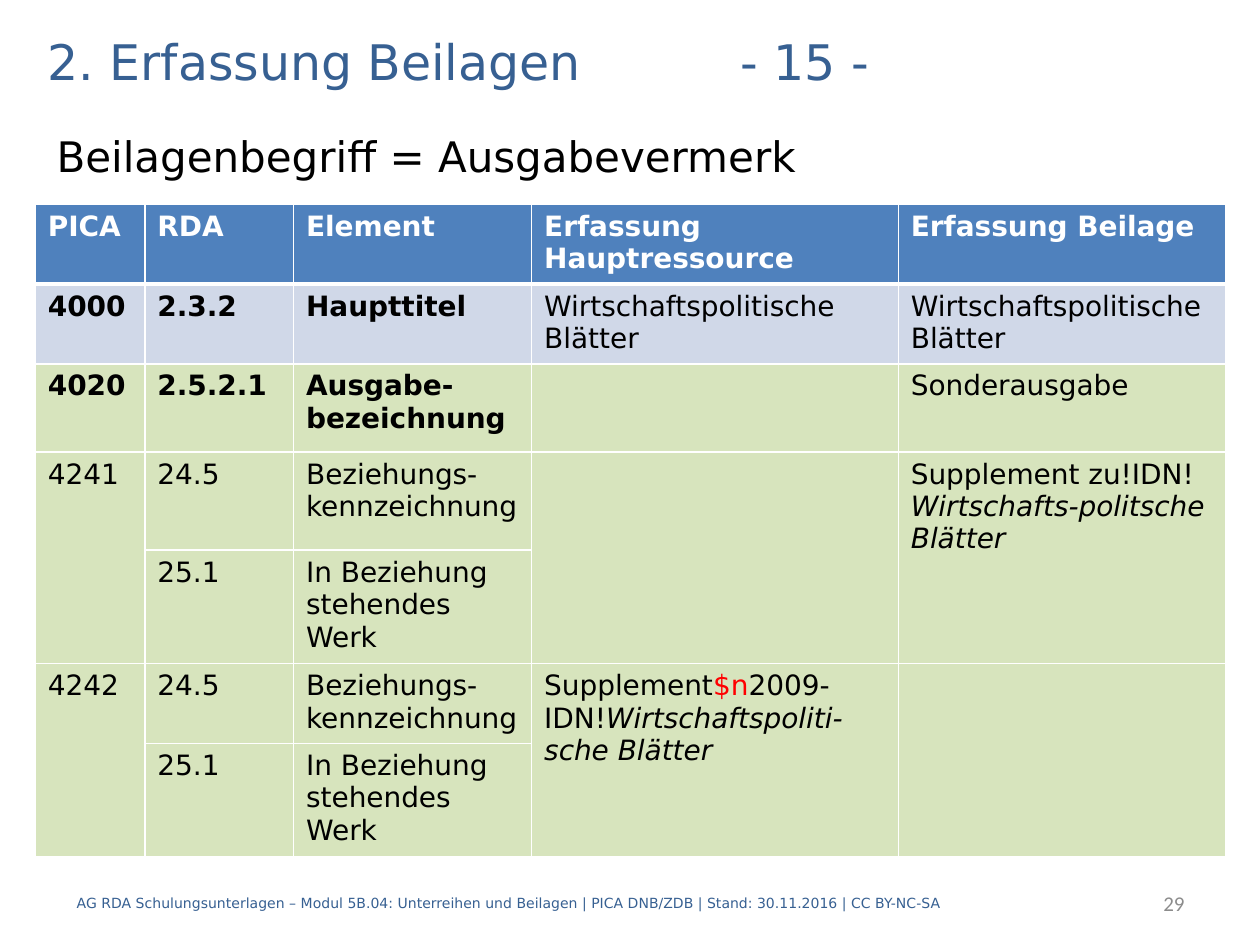
from dataclasses import dataclass

from lxml.etree import SubElement
from pptx import Presentation
from pptx.dml.color import RGBColor
from pptx.enum.text import MSO_ANCHOR, PP_ALIGN
from pptx.oxml.ns import qn
from pptx.util import Inches, Pt


@dataclass(frozen=True)
class Theme:
    font: str = "DejaVu Sans"
    number_font: str = "Calibri"
    blue: str = "376092"
    black: str = "000000"
    white: str = "FFFFFF"
    gray: str = "8C8C8C"
    red: str = "FF0000"
    header_fill: str = "4F81BD"
    title_fill: str = "D0D8E8"
    green_fill: str = "D7E4BD"
    title_size: int = 28
    subtitle_size: int = 24
    table_size: int = 16
    number_size: int = 12
    footer_size: int = 8


THEME = Theme()

COLUMN_WIDTHS = (0.87, 1.18, 1.89, 2.91, 2.6)
ROW_HEIGHTS = (0.63, 0.63, 0.7, 0.78, 0.25, 0.63, 0.63)
BOLD_CELLS = {(row, column) for row in (1, 2) for column in range(3)}
MERGED_ROWS = (3, 5)
MERGED_COLUMNS = (0, 3, 4)

DESIGNATION = "Beziehungs-kennzeichnung"
RELATED_WORK = "In Beziehung stehendes Werk"
MAIN_TITLE = "Wirtschaftspolitische Blätter"
ITALIC = {"italic": True}

# A cell is a plain string or a list of (text, format values) spans
ROWS = (
    ("PICA", "RDA", "Element", "Erfassung Hauptressource", "Erfassung Beilage"),
    ("4000", "2.3.2", "Haupttitel", MAIN_TITLE, MAIN_TITLE),
    ("4020", "2.5.2.1", "Ausgabe-bezeichnung", "", "Sonderausgabe"),
    ("4241", "24.5", DESIGNATION, "",
     [("Supplement zu!IDN!", {}), ("Wirtschafts-politsche Blätter", ITALIC)]),
    ("", "25.1", RELATED_WORK, "", ""),
    ("4242", "24.5", DESIGNATION,
     [("Supplement", {}), ("$n", {"color": THEME.red}), ("2009-IDN!", {}),
      ("Wirtschaftspoliti-sche Blätter", ITALIC)], ""),
    ("", "25.1", RELATED_WORK, "", ""),
)


def add_span(para, text, color, **format_values):
    span = para.add_run()
    span.text = text
    span.font.color.rgb = RGBColor.from_string(color)
    for name, value in format_values.items():
        setattr(span.font, name, value)


def add_text(page, box, text, color, size, font=THEME.font,
             anchor=MSO_ANCHOR.MIDDLE, **para_values):
    frame = page.shapes.add_textbox(*(Inches(length) for length in box)).text_frame
    frame.word_wrap = True
    frame.vertical_anchor = anchor
    para = frame.paragraphs[0]
    for name, value in para_values.items():
        setattr(para, name, value)
    add_span(para, text, color, size=Pt(size), name=font)


def set_borders(cell, widths):
    properties = cell._tc.get_or_add_tcPr()
    for position, (side, width) in enumerate(widths.items()):
        line = SubElement(properties, qn(f"a:{side}"), w=str(Pt(width)))
        fill = SubElement(line, qn("a:solidFill"))
        SubElement(fill, qn("a:srgbClr"), val=THEME.white)
        properties.insert(position, line)  # borders precede the fill


def fill_cell(cell, row, column, content):
    cell.fill.solid()
    fills = (THEME.header_fill, THEME.title_fill)
    fill = fills[row] if row < len(fills) else THEME.green_fill
    cell.fill.fore_color.rgb = RGBColor.from_string(fill)

    # The rule below the header is heavier, seen from both rows
    set_borders(cell, {"lnL": 1, "lnR": 1, "lnT": 3 if row == 1 else 1,
                       "lnB": 3 if row == 0 else 1})

    para = cell.text_frame.paragraphs[0]
    para.font.size = Pt(THEME.table_size)
    base = {"color": THEME.black if row else THEME.white,
            "size": Pt(THEME.table_size), "name": THEME.font,
            "bold": row == 0 or (row, column) in BOLD_CELLS}
    spans = [(content, {})] if isinstance(content, str) else content
    for text, format_values in spans:
        if text:
            add_span(para, text, **{**base, **format_values})


def add_heading(page, left, top, width):
    add_text(page, (left, top, width, 0.56), "2. Erfassung Beilagen\t\t\t- 15 -",
             THEME.blue, THEME.title_size)
    add_text(page, (left + 0.07, top + 0.79, width, 0.94),
             "Beilagenbegriff = Ausgabevermerk", THEME.black,
             THEME.subtitle_size, anchor=MSO_ANCHOR.TOP, space_before=Pt(4.8))


def add_field_table(page, left, top):
    table = page.shapes.add_table(
        len(ROWS), len(COLUMN_WIDTHS), Inches(left), Inches(top),
        Inches(sum(COLUMN_WIDTHS)), Inches(sum(ROW_HEIGHTS))).table
    for column, width in zip(table.columns, COLUMN_WIDTHS):
        column.width = Inches(width)
    for row, height in zip(table.rows, ROW_HEIGHTS):
        row.height = Inches(height)
    for row, contents in enumerate(ROWS):
        for column, content in enumerate(contents):
            fill_cell(table.cell(row, column), row, column, content)
    for row in MERGED_ROWS:
        for column in MERGED_COLUMNS:
            table.cell(row, column).merge(table.cell(row + 1, column))


def add_footer(page, left, top, right, height):
    add_text(page, (left, top, 8.35, height),
             "AG RDA Schulungsunterlagen – Modul 5B.04: Unterreihen und Beilagen"
             " | PICA DNB/ZDB | Stand: 30.11.2016 | CC BY-NC-SA",
             THEME.blue, THEME.footer_size)
    number_width = 1.59
    add_text(page, (right - number_width, top, number_width, height), "29",
             THEME.gray, THEME.number_size, font=THEME.number_font,
             alignment=PP_ALIGN.RIGHT)


def main():
    deck = Presentation()
    deck.slide_width, deck.slide_height = Inches(10), Inches(7.5)
    page = deck.slides.add_slide(deck.slide_layouts[6])
    add_heading(page, left=0.28, top=0.2, width=9.45)
    add_footer(page, left=0.51, top=6.97, right=9.5, height=0.4)
    add_field_table(page, left=0.28, top=1.62)
    deck.save("out.pptx")


if __name__ == "__main__":
    main()
